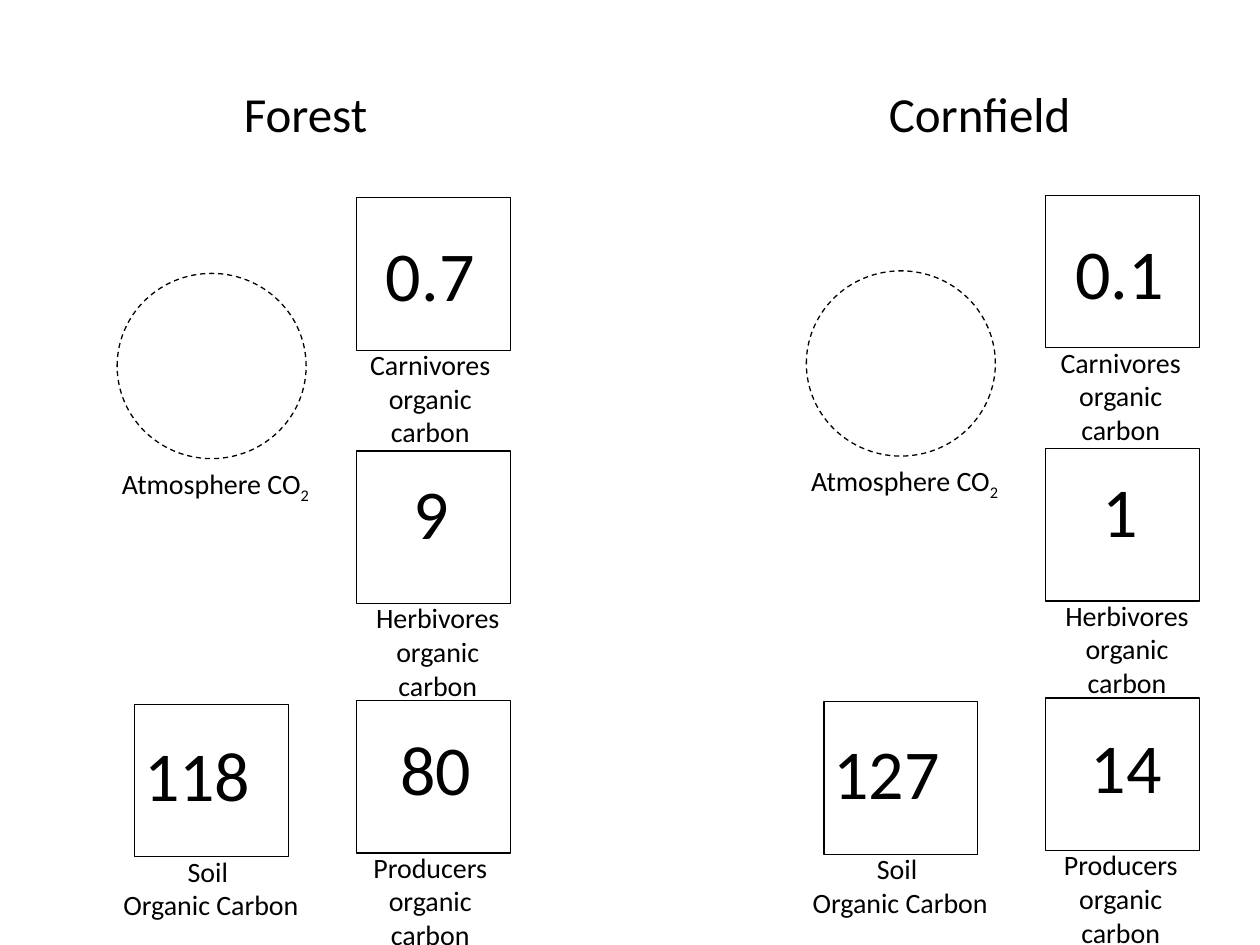
from pptx import Presentation
from pptx.dml.color import RGBColor
from pptx.enum.dml import MSO_LINE_DASH_STYLE as Dash
from pptx.enum.shapes import MSO_SHAPE as Shape
from pptx.enum.text import MSO_ANCHOR as Anchor, MSO_AUTO_SIZE as AutoSize, PP_ALIGN as Align
from pptx.util import Inches, Pt

BLACK = "000000"
WHITE = "FFFFFF"
BOX_WIDTH, BOX_HEIGHT = 1.22, 1.21
POOL_LEFT, SOIL_LEFT = 2.83, 1.07
CORNFIELD_SHIFT = (5.475, -0.02)


def color(value):
    return RGBColor.from_string(value)


class CarbonSlide:
    font = "Calibri"
    heading_size, label_size, number_size = 28, 16, 40

    def __init__(self, presentation):
        self.slide = presentation.slides.add_slide(presentation.slide_layouts[6])
        self.shapes = self.slide.shapes
        self.shift = (0, 0)

    def start_group(self, shift):
        self.shapes = self.slide.shapes.add_group_shape().shapes
        self.shift = shift

    def end_group(self):
        self.shapes = self.slide.shapes
        self.shift = (0, 0)

    def place(self, left, top, width, height):
        dx, dy = self.shift
        return [Inches(round(n, 2)) for n in (left + dx, top + dy, width, height)]

    def text(self, content, left, top, width, height, size):
        box = self.shapes.add_textbox(*self.place(left, top, width, height))
        frame = box.text_frame
        frame.word_wrap = True
        frame.auto_size = AutoSize.SHAPE_TO_FIT_TEXT
        frame.vertical_anchor = Anchor.TOP
        frame.text = content
        for paragraph in frame.paragraphs:
            paragraph.alignment = Align.CENTER
            for run in paragraph.runs:
                self.format_run(run, size)
        return box

    def format_run(self, run, size):
        run.font.name = self.font
        run.font.size = Pt(size)
        run.font.color.rgb = color(BLACK)

    def heading(self, content, left):
        self.text(content, left, 0.61, 3.21, 0.57, self.heading_size)

    def label(self, content, left, top, width, height=0.51):
        return self.text(content, left, top, width, height, self.label_size)

    def number(self, content, left, top, width):
        self.text(content, left, top, width, 0.77, self.number_size)

    def outline(self, kind, left, top, width, height):
        shape = self.shapes.add_shape(kind, *self.place(left, top, width, height))
        shape.shadow.inherit = False
        shape.fill.background()
        shape.line.color.rgb = color(BLACK)
        shape.line.width = Pt(0.75)
        return shape

    def box(self, left, top):
        self.outline(Shape.RECTANGLE, left, top, BOX_WIDTH, BOX_HEIGHT)

    def atmosphere(self):
        circle = self.outline(Shape.OVAL, 0.93, 2.17, 1.5, 1.47)
        circle.fill.solid()
        circle.fill.fore_color.rgb = color(WHITE)
        circle.line.dash_style = Dash.DASH
        label = self.label("Atmosphere CO", 0.79, 3.65, 1.84, 0.3)
        subscript = label.text_frame.paragraphs[0].add_run()
        subscript.text = "2"
        self.format_run(subscript, self.label_size)
        subscript.font._element.set("baseline", "-25000")

    def pool(self, name, top, label_left, value, number_left, number_top, number_width):
        self.box(POOL_LEFT, top)
        self.label(f"{name} organic carbon", label_left, top + 1.14, 1.43)
        self.number(value, number_left, number_top, number_width)

    def soil(self, value):
        self.box(SOIL_LEFT, 5.59)
        self.label("Soil \nOrganic Carbon", 0.86, 6.73, 1.63)
        self.number(value, 0.93, 5.76, 1.27)

    def ecosystem(self, shift, carnivores, herbivores, producers, soil):
        self.start_group(shift)
        self.atmosphere()
        self.pool("Carnivores", 1.57, 2.7, carnivores, 2.78, 1.79, 1.27)
        self.pool("Herbivores", 3.58, 2.76, herbivores, 2.94, 3.68, 0.96)
        self.pool("Producers", 5.56, 2.7, producers, 2.98, 5.71, 0.96)
        self.soil(soil)
        self.end_group()


def main():
    presentation = Presentation()
    presentation.slide_width = Inches(10)
    presentation.slide_height = Inches(7.5)
    carbon = CarbonSlide(presentation)
    carbon.ecosystem((0, 0), "0.7", "9", "80", "118")
    carbon.heading("Forest", 0.82)
    carbon.ecosystem(CORNFIELD_SHIFT, "0.1", "1", "14", "127")
    carbon.heading("Cornfield", 6.17)
    presentation.save("out.pptx")


if __name__ == "__main__":
    main()
